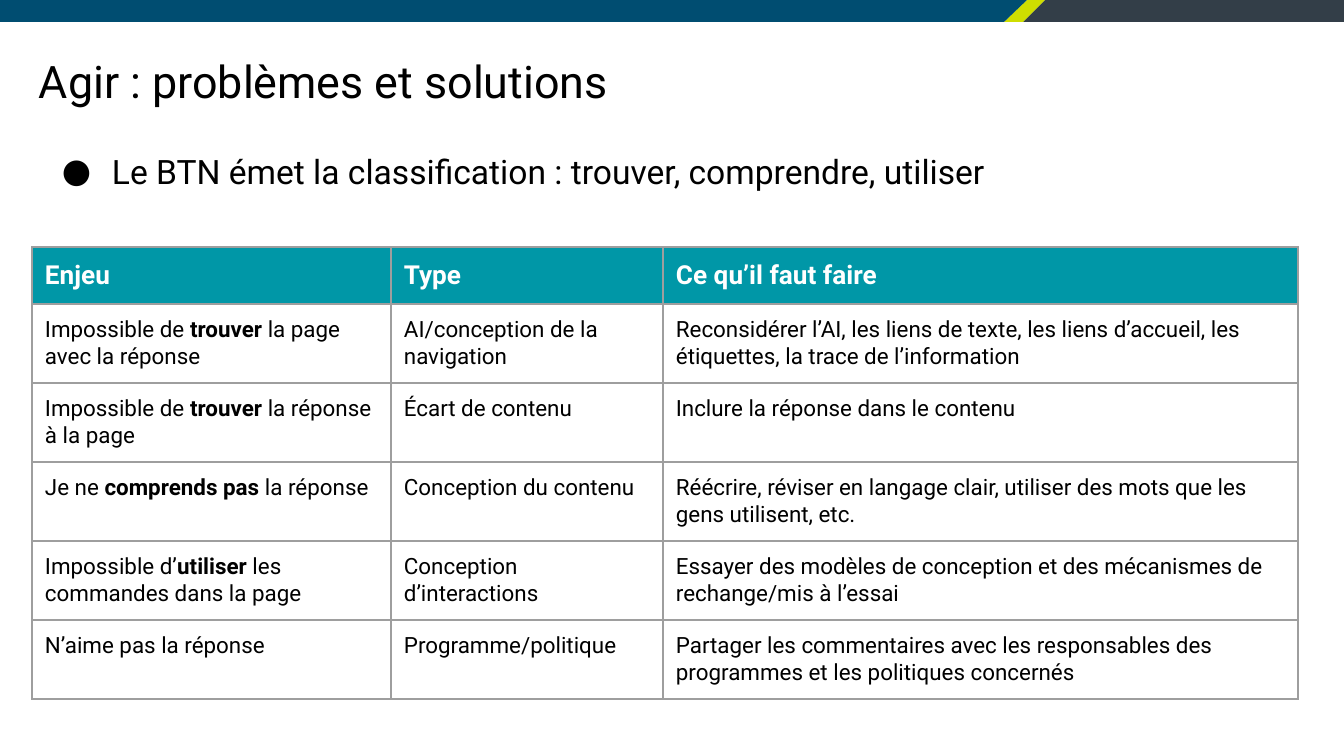
from dataclasses import dataclass

from lxml import etree
from pptx import Presentation
from pptx.dml.color import RGBColor
from pptx.enum.text import MSO_ANCHOR, PP_ALIGN
from pptx.oxml.ns import qn
from pptx.util import Pt

EMU_PER_PX = 914400 / 134.4
TITLE_ONLY = 5
LEFT = PP_ALIGN.LEFT
TOP, MIDDLE = MSO_ANCHOR.TOP, MSO_ANCHOR.MIDDLE


@dataclass(frozen=True)
class Theme:
    font: str = "Roboto"
    ink: str = "000000"
    paper: str = "FFFFFF"
    blue: str = "004D71"
    lime: str = "CFDE00"
    slate: str = "333E48"
    teal: str = "0097A7"
    grid: str = "9E9E9E"
    title_size: int = 24
    bullet_size: int = 18
    header_size: int = 14
    cell_size: int = 12


@dataclass(frozen=True)
class Band:
    color: str
    points: tuple


@dataclass(frozen=True)
class Issue:
    problem: str
    kind: str
    action: str


THEME = Theme()
SLIDE_WIDTH, SLIDE_HEIGHT = 1344, 756
INSET = 13
COLUMNS = (359, 272, 635)
HEADER_HEIGHT, ROW_HEIGHT = 57, 79
BAND_HEIGHT = 22

BANDS = (
    Band(THEME.slate, ((1045, 0), (SLIDE_WIDTH, 0),
                       (SLIDE_WIDTH, BAND_HEIGHT), (1023, BAND_HEIGHT))),
    Band(THEME.lime, ((1027, 0), (1045, 0),
                      (1023, BAND_HEIGHT), (1004, BAND_HEIGHT))),
    Band(THEME.blue, ((0, 0), (1027, 0),
                      (1004, BAND_HEIGHT), (0, BAND_HEIGHT))),
)

HEADER = Issue("**Enjeu**", "**Type**", "**Ce qu’il faut faire**")
ISSUES = (
    Issue("Impossible de **trouver** la page avec la réponse",
          "AI/conception de la navigation",
          "Reconsidérer l’AI, les liens de texte, les liens d’accueil, "
          "les étiquettes, la trace de l’information"),
    Issue("Impossible de **trouver** la réponse à la page",
          "Écart de contenu",
          "Inclure la réponse dans le contenu"),
    Issue("Je ne **comprends pas** la réponse",
          "Conception du contenu",
          "Réécrire, réviser en langage clair, utiliser des mots que les "
          "gens utilisent, etc."),
    Issue("Impossible d’**utiliser** les commandes dans la page",
          "Conception d’interactions",
          "Essayer des modèles de conception et des mécanismes de "
          "rechange/mis à l’essai"),
    Issue("N’aime pas la réponse",
          "Programme/politique",
          "Partager les commentaires avec les responsables des programmes "
          "et les politiques concernés"),
)


def px(length: int) -> int:
    return round(length * EMU_PER_PX)


def write(frame, text: str, *, size: int, color: str = THEME.ink,
          spacing: float = 1.0):
    """Fill the frame with one paragraph; **marks** enclose bold words."""
    frame.word_wrap = True
    paragraph = frame.paragraphs[0]
    paragraph.alignment = LEFT
    paragraph.line_spacing = spacing
    for index, part in enumerate(text.split("**")):
        if part:
            run = paragraph.add_run()
            run.text = part
            run.font.name = THEME.font
            run.font.size = Pt(size)
            run.font.bold = index % 2 == 1
            run.font.color.rgb = RGBColor.from_string(color)
    return paragraph


def set_insets(holder) -> None:
    holder.margin_left = holder.margin_right = px(INSET)
    holder.margin_top = holder.margin_bottom = px(INSET)


def draw_band(slide, band: Band) -> None:
    start, *others = band.points
    builder = slide.shapes.build_freeform(*start, scale=EMU_PER_PX)
    builder.add_line_segments(others)
    shape = builder.convert_to_shape()
    shape.shadow.inherit = False
    shape.fill.solid()
    shape.fill.fore_color.rgb = RGBColor.from_string(band.color)
    shape.line.fill.background()


def draw_title(slide, text: str) -> None:
    title = slide.shapes.title
    title.left, title.top, title.width, title.height = map(px, (26, 38, 1253, 85))
    frame = title.text_frame
    set_insets(frame)
    frame.vertical_anchor = MIDDLE
    write(frame, text, size=THEME.title_size)


def draw_bullet(slide, text: str) -> None:
    frame = slide.shapes.add_textbox(*map(px, (32, 132, 1253, 98))).text_frame
    set_insets(frame)
    frame.vertical_anchor = TOP
    paragraph = write(frame, text, size=THEME.bullet_size, spacing=1.15)
    properties = paragraph._p.get_or_add_pPr()
    properties.set("marL", str(px(67)))
    properties.set("indent", str(-px(50)))
    etree.SubElement(properties, qn("a:buFont"), typeface=THEME.font)
    etree.SubElement(properties, qn("a:buChar"), char="●")


def add_borders(cell) -> None:
    properties = cell._tc.get_or_add_tcPr()
    for side in ("lnL", "lnR", "lnT", "lnB"):
        line = etree.SubElement(properties, qn(f"a:{side}"), w=str(Pt(0.75)))
        fill = etree.SubElement(line, qn("a:solidFill"))
        etree.SubElement(fill, qn("a:srgbClr"), val=THEME.grid)


def draw_cell(cell, text: str, is_header: bool) -> None:
    set_insets(cell)
    cell.vertical_anchor = TOP
    add_borders(cell)
    if is_header:
        cell.fill.solid()
        cell.fill.fore_color.rgb = RGBColor.from_string(THEME.teal)
        write(cell.text_frame, text, size=THEME.header_size, color=THEME.paper)
    else:
        cell.fill.background()
        write(cell.text_frame, text, size=THEME.cell_size)


def draw_issues(slide) -> None:
    rows = (HEADER, *ISSUES)
    height = HEADER_HEIGHT + ROW_HEIGHT * len(ISSUES)
    table = slide.shapes.add_table(
        len(rows), len(COLUMNS), px(32), px(247), px(sum(COLUMNS)), px(height)
    ).table
    table.horz_banding = False
    for column, width in zip(table.columns, COLUMNS):
        column.width = px(width)
    for index, issue in enumerate(rows):
        is_header = index == 0
        row = table.rows[index]
        row.height = px(HEADER_HEIGHT if is_header else ROW_HEIGHT)
        for cell, text in zip(row.cells, (issue.problem, issue.kind, issue.action)):
            draw_cell(cell, text, is_header)


def main() -> None:
    deck = Presentation()
    deck.slide_width, deck.slide_height = px(SLIDE_WIDTH), px(SLIDE_HEIGHT)
    slide = deck.slides.add_slide(deck.slide_layouts[TITLE_ONLY])
    for band in BANDS:
        draw_band(slide, band)
    draw_title(slide, "Agir : problèmes et solutions")
    draw_issues(slide)
    draw_bullet(slide, "Le BTN émet la classification : trouver, comprendre, utiliser")
    deck.save("out.pptx")


if __name__ == "__main__":
    main()
